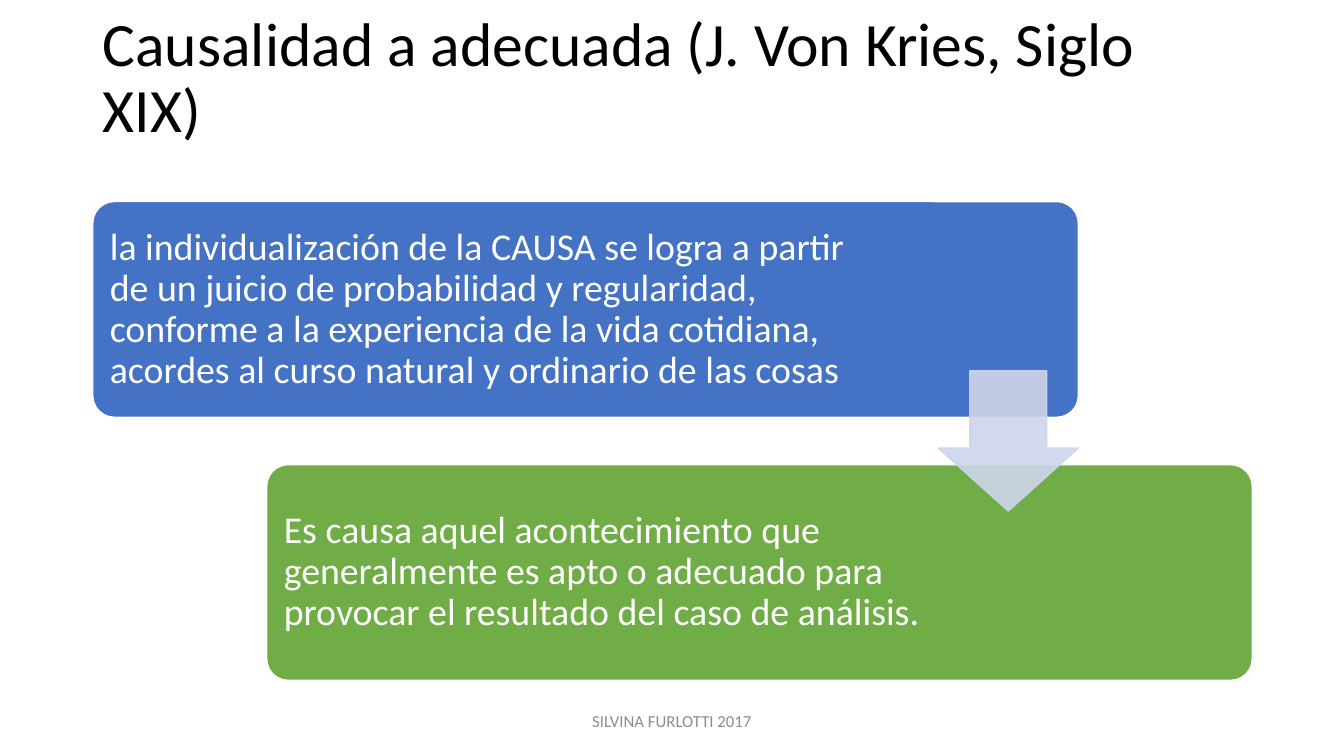
import pptx
import pptx.util
import pptx.dml.color
import pptx.enum.shapes
import pptx.enum.text
import pptx.oxml
import pptx.oxml.ns

Inches = pptx.util.Inches
RGBColor = pptx.dml.color.RGBColor
Shapes = pptx.enum.shapes.MSO_SHAPE
Align = pptx.enum.text.PP_ALIGN

BLACK = RGBColor(0x00, 0x00, 0x00)
WHITE = RGBColor(0xFF, 0xFF, 0xFF)
BLUE = RGBColor(0x44, 0x72, 0xC4)
GREEN = RGBColor(0x70, 0xAD, 0x47)
PALE_BLUE = RGBColor(0xCF, 0xD5, 0xEA)
GREY = RGBColor(0x8C, 0x8C, 0x8C)

HEADING = "Causalidad a adecuada (J. Von Kries, Siglo XIX)"
STEPS = [
    ("la individualización de la CAUSA se logra a partir de un juicio de "
     "probabilidad y regularidad, conforme a la experiencia de la vida "
     "cotidiana, acordes al curso natural y ordinario de las cosas", BLUE, 7.56),
    ("Es causa aquel acontecimiento que generalmente es apto o adecuado para "
     "provocar el resultado del caso de análisis.", GREEN, 6.53),
]
FOOTER = "SILVINA FURLOTTI 2017"

WIDTH, HEIGHT = 13.33, 7.5
LEFT, CONTENT_WIDTH = 0.92, 11.5
STEP_TOP, STEP_HEIGHT = 2, 2.14
STEP_WIDTH = CONTENT_WIDTH * 0.85
STEP_RIGHT = CONTENT_WIDTH - STEP_WIDTH
STEP_DOWN = 2.61
PADDING = 0.06
ARROW_SIZE = 1.39
FOOTER_WIDTH = 4.5

HEADING_FONT = {"size": pptx.util.Pt(44), "name": "Calibri"}
STEP_FONT = {"size": pptx.util.Pt(27), "name": "Calibri"}
FOOTER_FONT = {"size": pptx.util.Pt(12), "name": "Calibri"}
STEP_MARGINS = {side: Inches(0.11) for side in
                ("margin_left", "margin_top", "margin_right", "margin_bottom")}
HEADING_MARGINS = {"margin_bottom": Inches(0.72)}


def apply(target, values):
    for key, value in values.items():
        setattr(target, key, value)


def write(slide, box, words, font, color, spacing=0.9, align=Align.LEFT, margins={}):
    frame = slide.shapes.add_textbox(*map(Inches, box)).text_frame
    apply(frame, {"word_wrap": True,
                  "vertical_anchor": pptx.enum.text.MSO_ANCHOR.MIDDLE, **margins})
    paragraph = frame.paragraphs[0]
    apply(paragraph, {"line_spacing": spacing, "alignment": align})
    run = paragraph.add_run()
    run.text = words
    apply(run.font, font)
    run.font.color.rgb = color


def draw(slide, preset, box, fill, line, adjustments):
    shape = slide.shapes.add_shape(preset, *map(Inches, box))
    shape.shadow.inherit = False
    shape.fill.solid()
    shape.fill.fore_color.rgb = fill
    shape.line.color.rgb = line
    shape.line.width = pptx.util.Pt(1)
    for index, value in enumerate(adjustments):
        shape.adjustments[index] = value
    return shape


def main():
    deck = pptx.Presentation()
    apply(deck, {"slide_width": Inches(WIDTH), "slide_height": Inches(HEIGHT)})
    slide = deck.slides.add_slide(deck.slide_layouts[6])

    write(slide, (LEFT, 0.4, CONTENT_WIDTH, 1.45), HEADING, HEADING_FONT, BLACK,
          margins=HEADING_MARGINS)

    for row, (words, color, text_width) in enumerate(STEPS):
        left = LEFT + row * STEP_RIGHT
        top = STEP_TOP + row * STEP_DOWN
        draw(slide, Shapes.ROUNDED_RECTANGLE, (left, top, STEP_WIDTH, STEP_HEIGHT),
             color, WHITE, [0.1])
        write(slide, (left + PADDING, top + PADDING, text_width, STEP_HEIGHT - 2 * PADDING),
              words, STEP_FONT, WHITE, margins=STEP_MARGINS)

    gap_middle = STEP_TOP + (STEP_HEIGHT + STEP_DOWN) / 2
    arrow = draw(slide, Shapes.DOWN_ARROW,
                 (LEFT + STEP_WIDTH - ARROW_SIZE, gap_middle - ARROW_SIZE / 2,
                  ARROW_SIZE, ARROW_SIZE),
                 PALE_BLUE, PALE_BLUE, [0.55, 0.45])
    for color in arrow._element.spPr.iter(pptx.oxml.ns.qn("a:srgbClr")):
        color.append(pptx.oxml.parse_xml(
            f'<a:alpha {pptx.oxml.ns.nsdecls("a")} val="90000"/>'))

    write(slide, ((WIDTH - FOOTER_WIDTH) / 2, 6.95, FOOTER_WIDTH, 0.4), FOOTER,
          FOOTER_FONT, GREY, spacing=1.0, align=Align.CENTER)
    deck.save("out.pptx")


if __name__ == "__main__":
    main()
